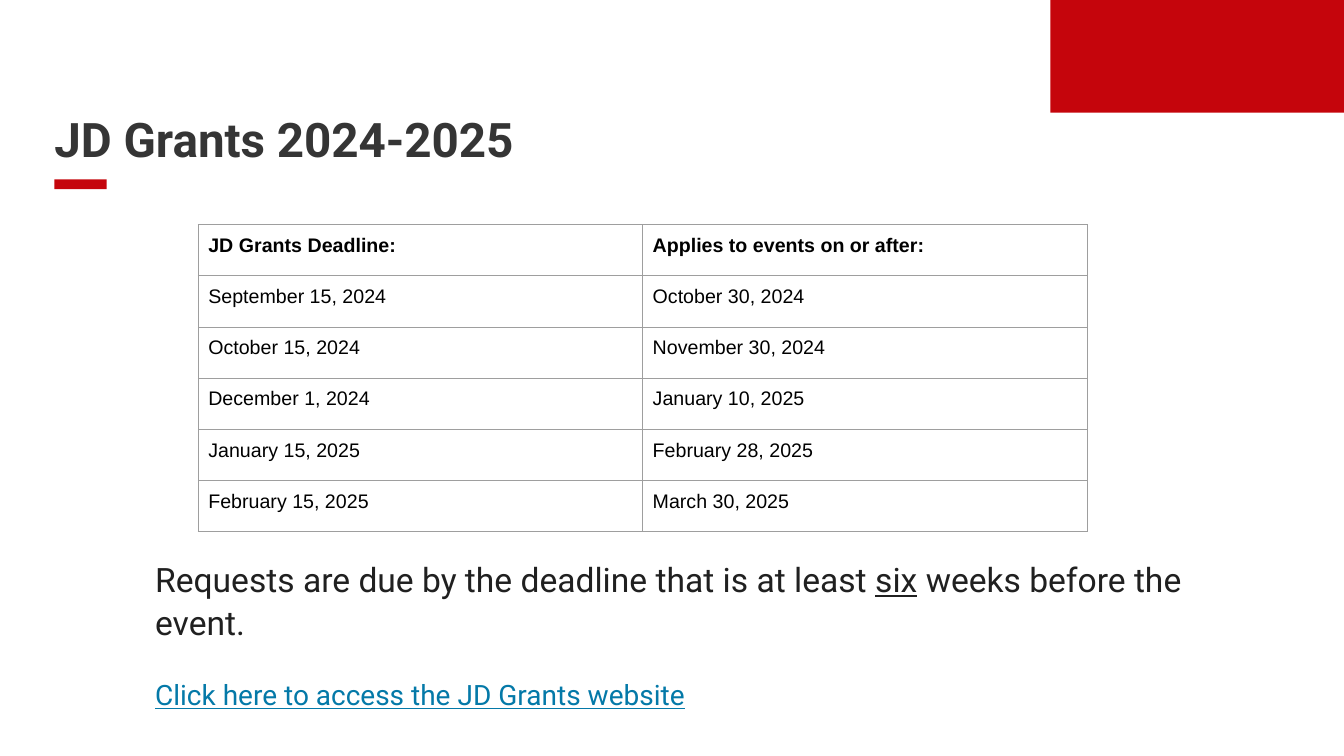
from lxml import etree
from pptx import Presentation
from pptx import util as u
from pptx.dml.color import RGBColor
from pptx.enum import shapes, text
from pptx.oxml import ns

Cm, Pt = u.Cm, u.Pt
COLORS = {"red": "C5050C", "title": "353535", "body": "202020", "link": "0479A8",
          "cell": "000000", "border": "9E9E9E", "paper": "FFFFFF"}
TITLE = {"name": "Roboto", "size": Pt(34), "bold": True}
BODY = {"name": "Roboto", "size": Pt(24)}
LINK = {"name": "Roboto", "size": Pt(20), "underline": True}
CELL = {"name": "Arial", "size": Pt(14)}
DEADLINES = [
    ("JD Grants Deadline:", "Applies to events on or after:"),
    ("September 15, 2024", "October 30, 2024"),
    ("October 15, 2024", "November 30, 2024"),
    ("December 1, 2024", "January 10, 2025"),
    ("January 15, 2025", "February 28, 2025"),
    ("February 15, 2025", "March 30, 2025"),
]


def rgb(color):
    return RGBColor.from_string(COLORS[color])


def set_all(target, values):
    for name, value in values.items():
        setattr(target, name, value)


def add_span(para, words, style, color):
    span = para.add_run()
    span.text = words
    set_all(span.font, style)
    span.font.color.rgb = rgb(color)
    return span


def add_frame(page, left, top, width, height, **layout):
    frame = page.shapes.add_textbox(Cm(left), Cm(top), Cm(width), Cm(height)).text_frame
    set_all(frame, {"word_wrap": True, **layout})
    return frame


def add_block(page, left, top, width, height):
    block = page.shapes.add_shape(shapes.MSO_SHAPE.RECTANGLE,
                                  Cm(left), Cm(top), Cm(width), Cm(height))
    block.shadow.inherit = False
    block.fill.solid()
    block.fill.fore_color.rgb = rgb("red")
    block.line.fill.background()


def add_header(page, left, top, width, height):
    """Place the title, the short bar below it and the corner block beside it."""
    frame = add_frame(page, left, top, width, height, margin_left=0,
                      margin_top=Cm(0.13), margin_right=Cm(0.25), margin_bottom=0,
                      vertical_anchor=text.MSO_ANCHOR.BOTTOM)
    para = frame.paragraphs[0]
    para.line_spacing = 0.9
    add_span(para, "JD Grants 2024-2025", TITLE, "title")
    add_block(page, left, top + height + 0.28, 1.32, 0.25)
    add_block(page, left + width, 0, 7.4, 2.84)


def draw_borders(cell):
    properties = cell._tc.get_or_add_tcPr()
    for position, side in enumerate(("a:lnL", "a:lnR", "a:lnT", "a:lnB")):
        line = etree.Element(ns.qn(side), w=str(Pt(0.75)))
        fill = etree.SubElement(line, ns.qn("a:solidFill"))
        etree.SubElement(fill, ns.qn("a:srgbClr"), val=COLORS["border"])
        properties.insert(position, line)


def add_deadlines(page, left, top, width, height):
    table = page.shapes.add_table(len(DEADLINES), 2, Cm(left), Cm(top),
                                  Cm(width), Cm(height)).table
    table.horz_banding = False
    margins = dict.fromkeys(
        ("margin_left", "margin_right", "margin_top", "margin_bottom"), Cm(0.25))
    for row, dates in enumerate(DEADLINES):
        for column, date in enumerate(dates):
            cell = table.cell(row, column)
            set_all(cell, margins)
            cell.fill.solid()
            cell.fill.fore_color.rgb = rgb("paper")
            draw_borders(cell)
            style = {**CELL, "bold": row == 0}
            add_span(cell.text_frame.paragraphs[0], date, style, "cell")


def add_notice(page, left, top, width, height):
    inset = Cm(0.25)
    frame = add_frame(page, left, top, width, height, margin_left=inset,
                      margin_top=inset, margin_right=inset, margin_bottom=inset)
    para = frame.paragraphs[0]
    para.line_spacing = 1.07
    add_span(para, "Requests are due by the deadline that is at least ", BODY, "body")
    add_span(para, "six", {**BODY, "underline": True}, "body")
    add_span(para, " weeks before the event.", BODY, "body")
    para = frame.add_paragraph()
    para.space_before = Pt(25)
    add_span(para, "Click here to access the JD Grants website", LINK, "link")


def main():
    deck = Presentation()
    set_all(deck, {"slide_width": Cm(33.87), "slide_height": Cm(19.05)})
    page = deck.slides.add_slide(deck.slide_layouts[6])
    add_header(page, 1.37, 1.27, 25.1, 2.97)
    add_deadlines(page, 5, 5.66, 22.4, 7.74)
    add_notice(page, 3.66, 13.77, 26.57, 3.4)
    deck.save("out.pptx")


if __name__ == "__main__":
    main()
